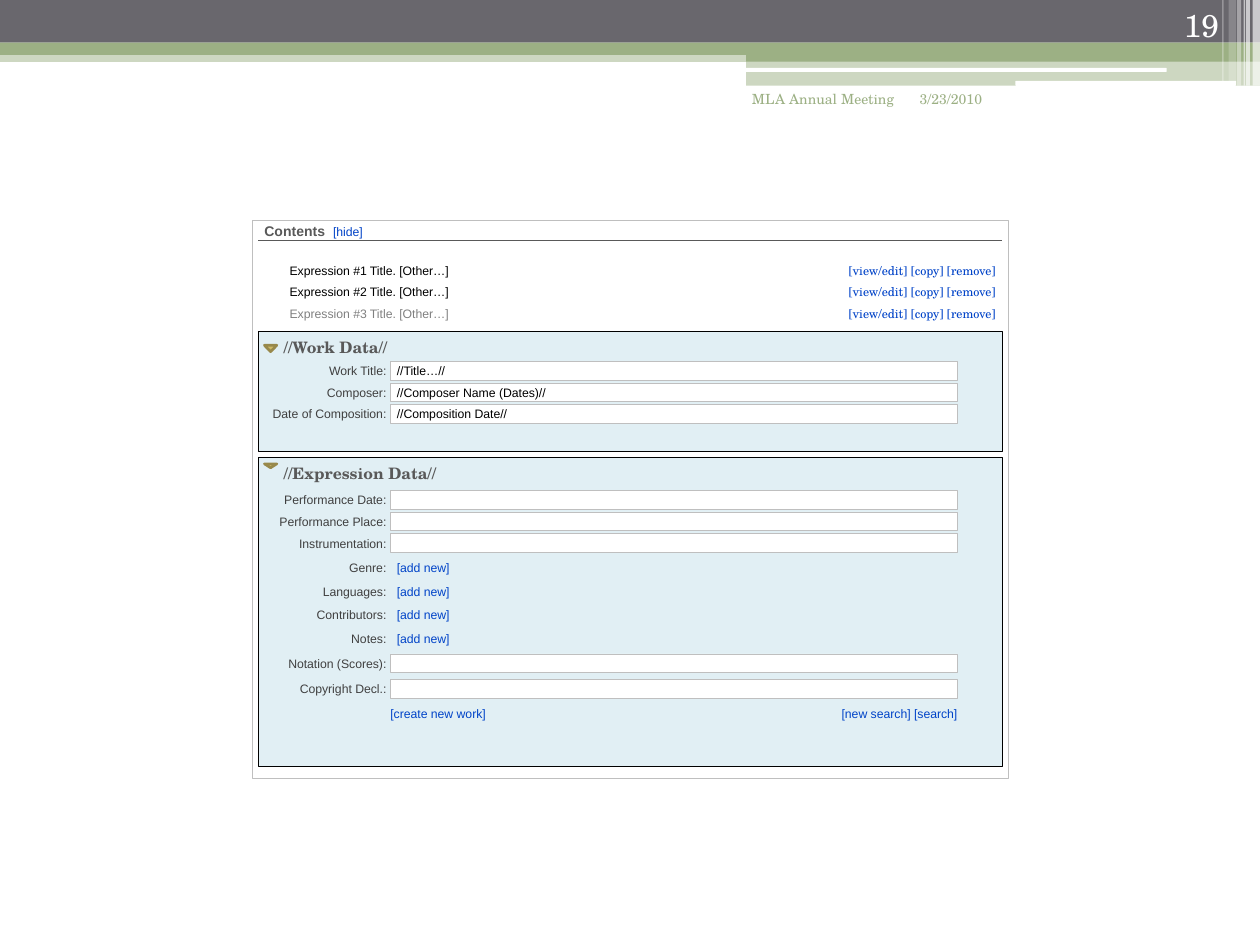
from dataclasses import dataclass
from typing import NamedTuple

from lxml import etree
from pptx import Presentation
from pptx.dml.color import RGBColor
from pptx.enum.shapes import MSO_CONNECTOR, MSO_SHAPE
from pptx.enum.text import MSO_ANCHOR, PP_ALIGN
from pptx.oxml.ns import qn
from pptx.util import Cm, Pt

RECT = MSO_SHAPE.RECTANGLE
ROUND = MSO_SHAPE.ROUNDED_RECTANGLE
WEDGE = MSO_SHAPE.ISOSCELES_TRIANGLE
LINE = MSO_CONNECTOR.STRAIGHT
LEFT, RIGHT = PP_ALIGN.LEFT, PP_ALIGN.RIGHT
TOP, MID, LOW = MSO_ANCHOR.TOP, MSO_ANCHOR.MIDDLE, MSO_ANCHOR.BOTTOM


@dataclass(frozen=True)
class Theme:
    sans: str = "Arial"
    serif: str = "TeX Gyre Schola"
    white: str = "FFFFFF"
    black: str = "000000"
    slate: str = "69676D"
    green: str = "9CB084"
    pale: str = "E1EFF4"
    edge: str = "BFBFBF"
    head: str = "595959"
    label: str = "404040"
    muted: str = "808080"
    link: str = "0043C8"
    gold: str = "CEB966"
    bronze: str = "98894B"
    small: float = 7
    note: float = 8
    title: float = 9
    page: float = 18


T = Theme()


class Box(NamedTuple):
    x: float
    y: float
    w: float
    h: float


class Type(NamedTuple):
    color: str
    size: float = T.small
    face: str = T.sans
    bold: bool = False


class Pad(NamedTuple):
    left: float = 0.25
    top: float = 0.13
    right: float = 0.25
    low: float = 0.13


class Band(NamedTuple):
    box: Box
    color: str
    alpha: int = 100
    kind: int = RECT


class Panel(NamedTuple):
    name: str
    box: Box
    mark: Box


class Field(NamedTuple):
    label: str
    value: str = ""
    boxed: bool = True


class Block(NamedTuple):
    top: float
    step: float
    rows: list[Field]


INK = Type(T.black)
LINK = Type(T.link)
LABEL = Type(T.label)
NOTE = Type(T.green, T.note, T.serif)
CELL = Pad(0.13, 0.03, 0.13, 0.03)
NAME = Pad(0.13, 0.03, 0.08, 0.03)
FOOT = Pad(2.54, 0.03, 0.76, 0.03)

STRIPES = [(25.25, 0.15, 1.73, 65), (25.12, 0.08, 1.73, 65), (25.07, 0.03, 1.73, 60),
           (24.94, 0.08, 1.73, 40), (24.77, 0.15, 1.63, 20), (24.64, 0.03, 1.63, 30)]
BANDS = [
    Band(Box(0, 1.02, 25.4, 0.23), T.green, 50),
    Band(Box(0, 0, 25.4, 0.86), T.slate),
    Band(Box(0, 0.86, 25.4, 0.25), T.green),
    Band(Box(15.04, 0.99, 10.36, 0.25), T.green),
    Band(Box(15.04, 1.22, 10.36, 0.51), T.green, 50),
    Band(Box(15.01, 1.37, 8.51, 0.08), T.white, kind=ROUND),
    Band(Box(20.47, 1.63, 4.45, 0.1), T.white, kind=ROUND),
] + [Band(Box(x, 0, w, h), T.white, alpha) for x, w, h, alpha in STRIPES]

PANELS = [
    Panel("//Work Data//", Box(5.21, 6.68, 14.99, 2.41), Box(5.33, 6.96, 0.25, 0.13)),
    Panel("//Expression Data//", Box(5.21, 9.22, 14.99, 6.22), Box(5.33, 9.35, 0.25, 0.08)),
]
BLOCKS = [
    Block(7.29, 0.43, [Field("Work Title:", "//Title…//"),
                       Field("Composer:", "//Composer Name (Dates)//"),
                       Field("Date of Composition:", "//Composition Date//")]),
    Block(9.88, 0.44, [Field("Performance Date:"), Field("Performance Place:"),
                       Field("Instrumentation:")]),
    Block(11.25, 0.48, [Field(name, "[add new]", False) for name in
                        ("Genre:", "Languages:", "Contributors:", "Notes:")]),
    Block(13.18, 0.51, [Field("Notation (Scores):"), Field("Copyright Decl.:")]),
]


def shape(page, box: Box, fill="", line="", width=0.25, alpha=100, kind=RECT):
    item = page.shapes.add_shape(kind, *map(Cm, box))
    item.shadow.inherit = False
    if fill:
        item.fill.solid()
        item.fill.fore_color.rgb = RGBColor.from_string(fill)
        if alpha < 100:
            tint = item.fill._xPr.find(".//" + qn("a:srgbClr"))
            etree.SubElement(tint, qn("a:alpha")).set("val", str(alpha * 1000))
    else:
        item.fill.background()
    if line:
        item.line.color.rgb = RGBColor.from_string(line)
        item.line.width = Pt(width)
    else:
        item.line.fill.background()
    return item


def style(run, kind: Type) -> None:
    run.font.name, run.font.size, run.font.bold = kind.face, Pt(kind.size), kind.bold
    run.font.color.rgb = RGBColor.from_string(kind.color)


def write(item, text: str, kind: Type, pad=Pad(), align=LEFT, anchor=TOP, gap=0.0):
    frame = item.text_frame
    frame.text = text
    frame.word_wrap, frame.vertical_anchor = True, anchor
    frame.margin_left, frame.margin_top, frame.margin_right, frame.margin_bottom = map(Cm, pad)
    for para in frame.paragraphs:
        para.alignment, para.space_after = align, Pt(gap)
        for run in para.runs:
            style(run, kind)
    return frame


def label(page, box: Box, text: str, kind: Type, pad=Pad(), align=LEFT, anchor=TOP, gap=0.0):
    return write(page.shapes.add_textbox(*map(Cm, box)), text, kind, pad, align, anchor, gap)


def contents(page) -> None:
    bold = Type(T.head, T.note, bold=True)
    para = label(page, Box(5.08, 4.45, 15.24, 0.41), "Contents", bold, anchor=MID).paragraphs[0]
    for text, kind in ((" ", bold), ("[hide]", LINK)):
        run = para.add_run()
        run.text = text
        style(run, kind)
    para.runs[1].font._element.set("spc", "220")
    rule = page.shapes.add_connector(LINE, Cm(5.21), Cm(4.85), Cm(20.19), Cm(4.85))
    rule.line.color.rgb = RGBColor.from_string(T.head)
    rule.line.width = Pt(0.75)
    etree.SubElement(rule._element.spPr, qn("a:effectLst"))
    shape(page, Box(5.08, 4.45, 15.24, 11.23), line=T.edge)

    names = [f"Expression #{n} Title. [Other…]" for n in (1, 2, 3)]
    frame = label(page, Box(5.08, 4.45, 15.24, 1.7), "\n".join(names), INK,
                  Pad(0.76, 0.85, 1.27), gap=4)
    style(frame.paragraphs[-1].runs[0], Type(T.muted))
    label(page, Box(15.24, 4.45, 5.08, 1.42), "\n".join(["[view/edit] [copy] [remove]"] * 3),
          Type(T.link, face=T.serif), Pad(top=0.85), RIGHT, gap=4)


def panel(page, part: Panel) -> None:
    write(shape(page, part.box, T.pale, T.black), part.name,
          Type(T.head, T.title, T.serif, True), Pad(left=0.51))
    shape(page, part.mark, T.gold, T.bronze, 1.5, kind=WEDGE).rotation = 180


def block(page, part: Block) -> None:
    for n, row in enumerate(part.rows):
        top = part.top + n * part.step
        box = Box(7.87, top, 11.43, 0.38)
        if row.boxed:
            item = shape(page, box, T.white, T.edge)
            if row.value:
                write(item, row.value, INK, CELL, anchor=MID)
        else:
            label(page, box, row.value, LINK, CELL, anchor=MID)
        label(page, Box(5.33, top, 2.54, 0.38), row.label, LABEL, NAME, RIGHT, MID)


def main() -> None:
    deck = Presentation()
    deck.slide_width, deck.slide_height = Cm(25.4), Cm(19.05)
    page = deck.slides.add_slide(deck.slide_layouts[6])
    for band in BANDS:
        shape(page, band.box, band.color, alpha=band.alpha, kind=band.kind)
    contents(page)
    for part in PANELS:
        panel(page, part)
    for part in BLOCKS:
        block(page, part)
    for text, align in (("[create new work]", LEFT), ("[new search] [search]", RIGHT)):
        label(page, Box(5.33, 14.2, 14.73, 0.38), text, LINK, FOOT, align, MID)
    label(page, Box(18.29, 1.7, 2.67, 1.27), "3/23/2010", NOTE)
    label(page, Box(22.71, 0, 2.11, 1.02), "19", Type(T.white, T.page, T.serif),
          align=RIGHT, anchor=LOW)
    label(page, Box(14.6, 1.7, 3.68, 1.27), "MLA Annual Meeting", NOTE, align=RIGHT)
    deck.save("out.pptx")


if __name__ == "__main__":
    main()
